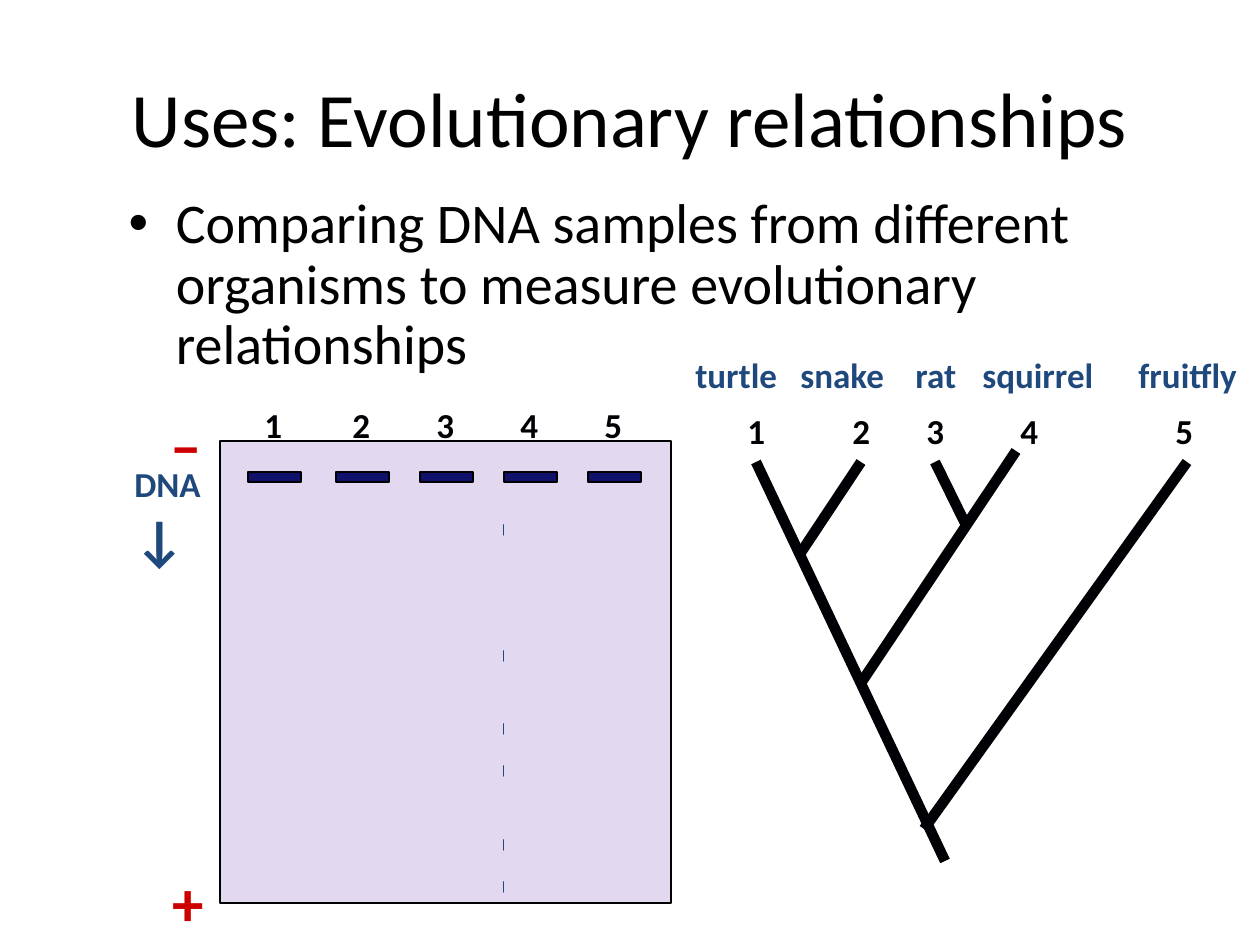
import pptx
import pptx.util
import pptx.dml.color
import pptx.enum.shapes
import pptx.enum.text
import pptx.oxml.ns
import lxml.etree

RGB = pptx.dml.color.RGBColor
BLACK = RGB(0x00, 0x00, 0x00)
INK = RGB(0x00, 0x00, 0x05)
RED = RGB(0xCC, 0x00, 0x00)
BLUE = RGB(0x1F, 0x49, 0x7D)
NAVY = RGB(0x0F, 0x11, 0x6A)
LILAC = RGB(0xE2, 0xD8, 0xEF)
FONT = "Calibri"
PX = 914400 / 126  # EMU in one px


def emu(*lengths):
    return [round(v * PX) for v in lengths]


prs = pptx.Presentation()
prs.slide_width, prs.slide_height = emu(1260, 945)
s = prs.slides.add_slide(prs.slide_layouts[1])


def add_label(text, box, color, sizes=(20,), wrap=False):
    """Add bold text, one size for each paragraph."""
    tf = s.shapes.add_textbox(*emu(*box)).text_frame
    tf.word_wrap = wrap
    tf.vertical_anchor = pptx.enum.text.MSO_ANCHOR.MIDDLE
    tf.text = text
    for p, size in zip(tf.paragraphs, sizes):
        font = p.runs[0].font
        font.name, font.bold = FONT, True
        font.size = pptx.util.Pt(size)
        font.color.rgb = color


def add_rect(box, fill, line=None):
    sp = s.shapes.add_shape(pptx.enum.shapes.MSO_SHAPE.RECTANGLE, *emu(*box))
    sp.shadow.inherit = False
    sp.fill.solid()
    sp.fill.fore_color.rgb = fill
    if line is None:
        sp.line.fill.background()
    else:
        sp.line.color.rgb = line
        sp.line.width = pptx.util.Pt(0.75)


# Title and body
for sp, text, size, box in [
    (s.shapes.title, "Uses: Evolutionary relationships", 44, (63, 38, 1134, 158)),
    (s.placeholders[1],
     "Comparing DNA samples from different organisms to measure evolutionary relationships",
     32, (116, 189, 1103, 199)),
]:
    sp.left, sp.top, sp.width, sp.height = emu(*box)
    sp.text_frame.text = text
    font = sp.text_frame.paragraphs[0].runs[0].font
    font.name, font.size = FONT, pptx.util.Pt(size)
    font.color.rgb = BLACK
s.placeholders[1].text_frame.paragraphs[0].line_spacing = 0.9

# Electrodes and direction of travel
add_label("–", (158, 399, 60, 88), RED, (36,), wrap=True)
add_label("+", (160, 857, 60, 88), RED, (36,), wrap=True)
add_label("DNA\n↓", (122, 456, 101, 122), BLUE, (20, 32))

# Gel with its wells
add_rect((220, 441, 451, 462), LILAC, BLACK)
wells = [248, 336, 420, 504, 588]
for number, x in enumerate(wells, 1):
    add_rect((x, 472, 53, 10), NAVY, BLACK)
    add_label(str(number), (x + 4, 397, 45, 54), INK)

# Bands of lane 4, then the lane covers
for y in [525, 651, 724, 766, 840, 882]:
    add_rect((wells[3], y, 53, 10), BLUE, BLUE)
for x in [237, 334, 415, 504, 585]:
    add_rect((x, 486, 71, 413), LILAC)

# Evolutionary tree: branch ends, number left, name, name left and width
branches = [
    ((756, 462, 945, 861), 735, "turtle", 683, 113),
    ((861, 462, 798, 557), 840, "snake", 788, 125),
    ((935, 462, 966, 525), 914, "rat", 903, 71),
    ((1016, 451, 861, 683), 1008, "squirrel", 970, 154),
    ((1187, 462, 924, 829), 1163, "fruitfly", 1126, 135),
]
for number, (ends, number_x, name, name_x, name_w) in enumerate(branches, 1):
    branch = s.shapes.add_connector(pptx.enum.shapes.MSO_CONNECTOR.STRAIGHT, *emu(*ends))
    branch.line.color.rgb = INK
    branch.line.width = pptx.util.Pt(6)
    lxml.etree.SubElement(branch.element.spPr, pptx.oxml.ns.qn("a:effectLst"))
    add_label(str(number), (number_x, 403, 45, 54), INK)
    add_label(name, (name_x, 347, name_w, 54), BLUE)

prs.save("out.pptx")
